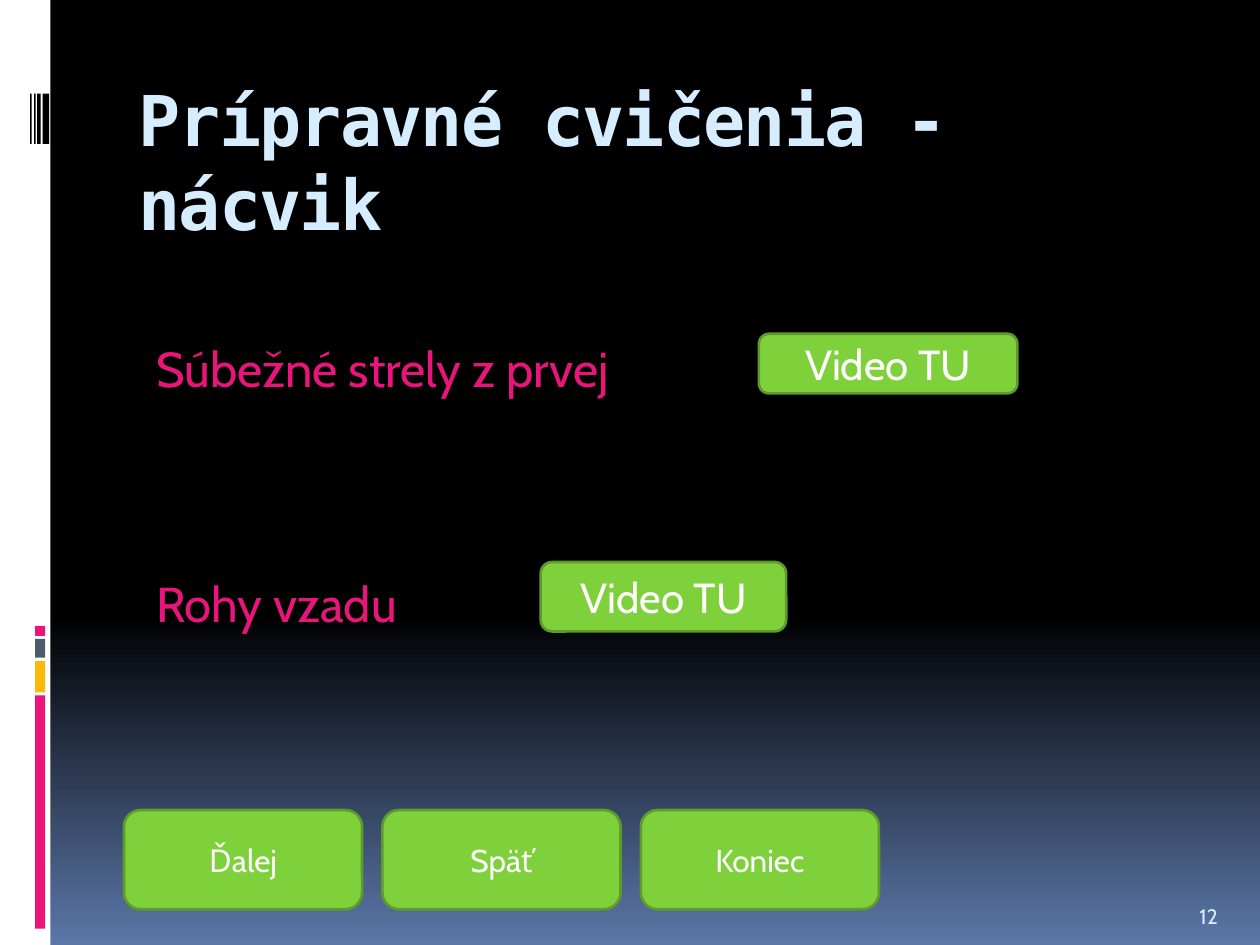
"""Build the slide of preparatory exercises with its side stripes and buttons."""
from copy import deepcopy

from pptx import Presentation
from pptx.dml.color import RGBColor
from pptx.enum.shapes import MSO_SHAPE as Shape
from pptx.enum.text import MSO_ANCHOR as Anchor, PP_ALIGN as Align
from pptx.oxml.ns import qn
from pptx.util import Cm, Pt


def rgb(value):
    return RGBColor.from_string(value)


def write(frame, lines, size, color, font="Cabin"):
    frame.word_wrap = True
    frame.text = "\n".join(lines)
    for paragraph in frame.paragraphs:
        for run in paragraph.runs:
            run.font.size = Pt(size)
            run.font.name = font
            run.font.color.rgb = rgb(color)


deck = Presentation()
deck.slide_width, deck.slide_height = Cm(25.4), Cm(19.05)
slide = deck.slides.add_slide(deck.slide_layouts[6])
shapes = slide.shapes

backdrop = slide.background.fill
backdrop.gradient()
backdrop.gradient_angle = 270
stop_list = slide.element.find(".//" + qn("a:gsLst"))
stop_list.insert(1, deepcopy(stop_list[0]))
gradient = [(0, "000000"), (0.65, "000000"), (1, "5B77A8")]
for stop, (position, color) in zip(backdrop.gradient_stops, gradient):
    stop.position = position
    stop.color.rgb = rgb(color)

stripes = [
    (0, 0, 1.02, 19.05, "FFFFFF"),
    (0.71, 14.02, 0.2, 4.7, "EA157A"),
    (0.71, 13.33, 0.2, 0.63, "FEB80A"),
    (0.71, 12.88, 0.2, 0.38, "4E5B6F"),
    (0.71, 12.62, 0.2, 0.2, "EA157A"),
]
stripes += [(left, 1.89, width, 1.01, "000000")
            for left, width in [(0.86, 0.13), (0.75, 0.07), (0.69, 0.03), (0.61, 0.03)]]
for left, top, width, height, color in stripes:
    stripe = shapes.add_shape(Shape.RECTANGLE, Cm(left), Cm(top), Cm(width), Cm(height))
    stripe.shadow.inherit = False
    stripe.fill.solid()
    stripe.fill.fore_color.rgb = rgb(color)
    stripe.line.fill.background()

title = shapes.add_textbox(Cm(2.54), Cm(1.42), Cm(21), Cm(2.54)).text_frame
write(title, ["Prípravné cvičenia - nácvik"], 40, "D6ECFF", "DejaVu Sans Mono")
title_font = title.paragraphs[0].runs[0].font
title_font.bold = True
title_font._element.set("spc", "-100")

page_number = shapes.add_textbox(Cm(23.93), Cm(17.83), Cm(1.27), Cm(1.02)).text_frame
write(page_number, ["12"], 12, "D6ECFF")
page_number.vertical_anchor = Anchor.BOTTOM

drills = shapes.add_textbox(Cm(2.9), Cm(6.7), Cm(10), Cm(6.2)).text_frame
write(drills, ["Súbežné strely z prvej", "Rohy vzadu"], 28, "EA157A")
drills.paragraphs[1].space_before = Pt(100.5)

buttons = [
    ("Video TU", 15.3, 6.73, 5.21, 1.2, 24),
    ("Video TU", 10.9, 11.33, 4.95, 1.4, 24),
]
buttons += [(label, 2.5 + 5.21 * i, 16.33, 4.8, 2, 18)
            for i, label in enumerate(["Ďalej", "Späť", "Koniec"])]
for label, left, top, width, height, size in buttons:
    button = shapes.add_shape(Shape.ROUNDED_RECTANGLE, Cm(left), Cm(top), Cm(width), Cm(height))
    button.shadow.inherit = False
    button.fill.solid()
    button.fill.fore_color.rgb = rgb("7FD13B")
    button.line.color.rgb = rgb("5E9B2C")
    button.line.width = Pt(1.5)
    write(button.text_frame, [label], size, "FFFFFF")
    button.text_frame.vertical_anchor = Anchor.MIDDLE
    button.text_frame.paragraphs[0].alignment = Align.CENTER

deck.save("out.pptx")
